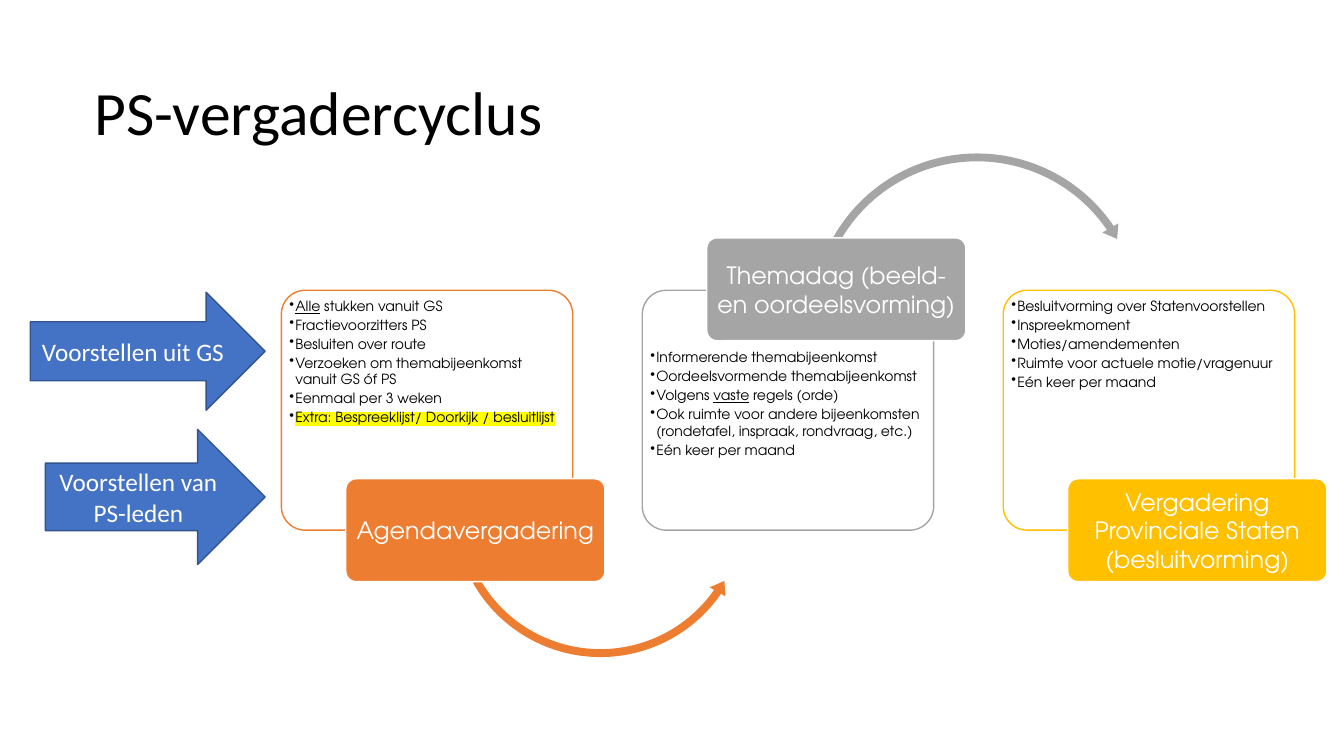
from dataclasses import dataclass
from typing import NamedTuple

from lxml.etree import SubElement
from pptx import Presentation
from pptx.dml.color import RGBColor
from pptx.enum.shapes import MSO_SHAPE as Kind
from pptx.enum.text import MSO_ANCHOR as Anchor, MSO_AUTO_SIZE as Fit, PP_ALIGN as Align
from pptx.oxml.ns import qn
from pptx.util import Emu, Pt

# Scale, colours and fonts
PX = 9144  # 100 px to the inch
BLACK = RGBColor(0x00, 0x00, 0x00)
WHITE = RGBColor(0xFF, 0xFF, 0xFF)
BLUE = RGBColor(0x44, 0x72, 0xC4)
NAVY = RGBColor(0x32, 0x54, 0x91)
ORANGE = RGBColor(0xED, 0x7D, 0x31)
GREY = RGBColor(0xA5, 0xA5, 0xA5)
GOLD = RGBColor(0xFF, 0xC0, 0x00)
YELLOW = RGBColor(0xFF, 0xFF, 0x00)
PLAIN = "Calibri"
ROUND = "TeX Gyre Adventor"

# Panel grid
LEFT, TOP, STEP = 279, 288, 358


class Box(NamedTuple):
    x: int
    y: int
    w: int
    h: int


class Span(NamedTuple):
    text: str
    under: bool = False
    mark: bool = False


@dataclass
class Arc:
    kind: Kind
    box: Box
    adj: tuple[float, ...]


@dataclass
class Panel:
    label: str
    color: RGBColor
    items: list[list[Span]]
    high: bool = False
    arc: Arc | None = None


@dataclass
class Input:
    text: str
    box: Box


PANELS = [
    Panel("Agendavergadering", ORANGE, [
        [Span("Alle", under=True), Span(" stukken vanuit GS")],
        [Span("Fractievoorzitters PS")],
        [Span("Besluiten over route")],
        [Span("Verzoeken om themabijeenkomst vanuit GS óf PS")],
        [Span("Eenmaal per 3 weken")],
        [Span("Extra: Bespreeklijst/ Doorkijk / besluitlijst", mark=True)],
    ], arc=Arc(Kind.LEFT_CIRCULAR_ARROW, Box(445, 356, 301, 301),
               (0.026, 3.11, 20.865, 90.245, 0.03))),
    Panel("Themadag (beeld- en oordeelsvorming)", GREY, [
        [Span("Informerende themabijeenkomst")],
        [Span("Oordeelsvormende themabijeenkomst")],
        [Span("Volgens "), Span("vaste", under=True), Span(" regels (orde)")],
        [Span("Ook ruimte voor andere bijeenkomsten "
              "(rondetafel, inspraak, rondvraag, etc.)")],
        [Span("Eén keer per maand")],
    ], high=True, arc=Arc(Kind.CIRCULAR_ARROW, Box(800, 147, 338, 338),
                          (0.023, 2.752, 195.493, 125.755, 0.027))),
    Panel("Vergadering Provinciale Staten (besluitvorming)", GOLD, [
        [Span("Besluitvorming over Statenvoorstellen")],
        [Span("Inspreekmoment")],
        [Span("Moties/amendementen")],
        [Span("Ruimte voor actuele motie/vragenuur")],
        [Span("Eén keer per maand")],
    ]),
]
INPUTS = [
    Input("Voorstellen uit GS", Box(30, 290, 233, 117)),
    Input("Voorstellen van PS-leden", Box(45, 426, 218, 134)),
]


def scale(box: Box) -> list[Emu]:
    return [Emu(v * PX) for v in box]


def style(font, name: str, size: int, color: RGBColor) -> None:
    font.name, font.size = name, Pt(size)
    font.color.rgb = color


def inset(frame, side: int, edge: int) -> None:
    frame.margin_left = frame.margin_right = Emu(side * PX)
    frame.margin_top = frame.margin_bottom = Emu(edge * PX)


def draw(slide, kind: Kind, box: Box, fill: RGBColor,
         line: RGBColor | None = None, adj: tuple[float, ...] = ()):
    shape = slide.shapes.add_shape(kind, *scale(box))
    shape.shadow.inherit = False
    shape.fill.solid()
    shape.fill.fore_color.rgb = fill
    if line is None:
        shape.line.fill.background()
    else:
        shape.line.color.rgb = line
        shape.line.width = Pt(1)
    for i, value in enumerate(adj):
        shape.adjustments[i] = value
    return shape


def write(shape, text: str, name: str, size: int) -> None:
    frame = shape.text_frame
    frame.word_wrap = True
    frame.vertical_anchor = Anchor.MIDDLE
    para = frame.paragraphs[0]
    para.text = text
    para.alignment = Align.CENTER
    style(para.font, name, size, WHITE)


def bullet(para) -> None:
    props = para._p.get_or_add_pPr()
    props.set("marL", str(6 * PX))
    props.set("indent", str(-6 * PX))
    SubElement(props, qn("a:buChar")).set("char", "•")


def mark(run) -> None:
    run.font.color.rgb = BLACK
    glow = SubElement(run.font._element, qn("a:highlight"))
    SubElement(glow, qn("a:srgbClr")).set("val", str(YELLOW))


def add_list(slide, box: Box, items: list[list[Span]]) -> None:
    frame = slide.shapes.add_textbox(*scale(box)).text_frame
    frame.word_wrap = True
    inset(frame, 2, 2)
    for i, item in enumerate(items):
        para = frame.add_paragraph() if i else frame.paragraphs[0]
        para.level = 1
        bullet(para)
        para.space_after = Pt(1.5)
        style(para.font, ROUND, 10, BLACK)
        for span in item:
            run = para.add_run()
            run.text = span.text
            if span.under:
                run.font.underline = True
            if span.mark:
                mark(run)


def add_panel(slide, panel: Panel, x: int) -> None:
    draw(slide, Kind.ROUNDED_RECTANGLE, Box(x, TOP, 289, 238),
         WHITE, panel.color, (0.1,))
    add_list(slide, Box(x + 6, 344 if panel.high else 293, 278, 176), panel.items)
    if panel.arc:
        draw(slide, panel.arc.kind, panel.arc.box, panel.color, adj=panel.arc.adj)
    label = draw(slide, Kind.ROUNDED_RECTANGLE,
                 Box(x + 64, 236 if panel.high else 475, 257, 102),
                 panel.color, WHITE, (0.1,))
    inset(label.text_frame, 7, 5)
    write(label, panel.label, ROUND, 17)


def add_title(slide, text: str) -> None:
    title = slide.shapes.title
    title.left, title.top, title.width, title.height = scale(Box(84, 42, 1150, 145))
    frame = title.text_frame
    frame.auto_size = Fit.NONE
    frame.vertical_anchor = Anchor.MIDDLE
    para = frame.paragraphs[0]
    para.text = text
    para.alignment = Align.LEFT
    para.line_spacing = 0.9
    style(para.font, PLAIN, 44, BLACK)


def main() -> None:
    deck = Presentation()
    deck.slide_width, deck.slide_height = Emu(1333 * PX), Emu(750 * PX)
    slide = deck.slides.add_slide(deck.slide_layouts[5])
    add_title(slide, "PS-vergadercyclus")
    # Meeting cycle
    for i, panel in enumerate(PANELS):
        add_panel(slide, panel, LEFT + i * STEP)
    # Incoming proposals
    for item in INPUTS:
        arrow = draw(slide, Kind.RIGHT_ARROW, item.box, BLUE, NAVY)
        write(arrow, item.text, PLAIN, 18)
    deck.save("out.pptx")


if __name__ == "__main__":
    main()
